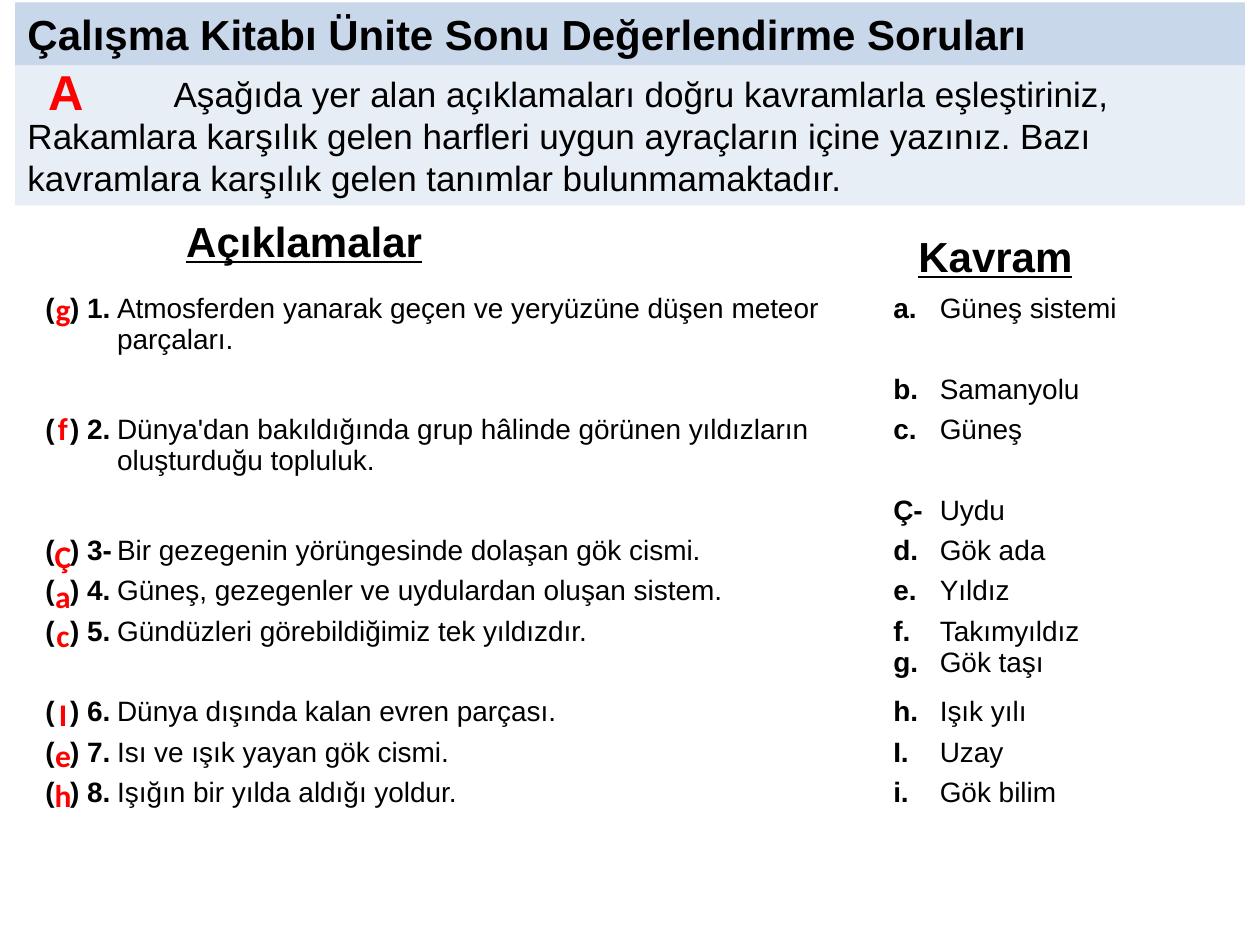
from dataclasses import dataclass
from lxml.etree import SubElement
from pptx import Presentation
from pptx.dml.color import RGBColor as RGB
from pptx.enum.shapes import MSO_SHAPE as Shape
from pptx.enum.text import MSO_ANCHOR as Anchor, MSO_AUTO_SIZE as AutoSize, PP_ALIGN as Align
from pptx.oxml.ns import qn
from pptx.util import Inches, Pt

TITLE = "Çalışma Kitabı Ünite Sonu Değerlendirme Soruları"
TASK = ("Aşağıda yer alan açıklamaları doğru kavramlarla eşleştiriniz, "
        "Rakamlara karşılık gelen harfleri uygun ayraçların içine yazınız. "
        "Bazı kavramlara karşılık gelen tanımlar bulunmamaktadır.")
ROWS = [
    ("(  ) 1.", "Atmosferden yanarak geçen ve yeryüzüne düşen meteor parçaları.", "a.", "Güneş sistemi"),
    ("", "", "b.", "Samanyolu"),
    ("(  ) 2.", "Dünya'dan bakıldığında grup hâlinde görünen yıldızların oluşturduğu topluluk.", "c.", "Güneş"),
    ("", "", "Ç-", "Uydu"),
    ("(  ) 3-", "Bir gezegenin yörüngesinde dolaşan gök cismi.", "d.", "Gök ada"),
    ("(  ) 4.", "Güneş, gezegenler ve uydulardan oluşan sistem.", "e.", "Yıldız"),
    ("(  ) 5.", "Gündüzleri görebildiğimiz tek yıldızdır.", "f.\ng.", "Takımyıldız\vGök taşı"),
    ("(  ) 6.", "Dünya dışında kalan evren parçası.", "h.", "Işık yılı"),
    ("(  ) 7.", "Isı ve ışık yayan gök cismi.", "I.", "Uzay"),
    ("(  ) 8.", "Işığın bir yılda aldığı yoldur.", "i.", "Gök bilim"),
]
ANSWERS = {0: ("g", 0.08), 2: ("f", 0.09), 4: ("Ç", 0.04), 5: ("a", 0.04),
           6: ("c", 0.05), 7: ("I", 0.06), 8: ("e", 0.06), 9: ("h", 0.06)}
TALL_ROWS = {0, 2, 6}
COLS = (0.57, 6.16, 0.37, 2.12)
ROW_H = 0.32
TABLE_X, TABLE_Y = 0.35, 2.33
ANSWER_X, ANSWER_W, ANSWER_H = 0.33, 0.34, 0.4


@dataclass(frozen=True)
class Theme:
    font: str = "Arial"
    answer_font: str = "Calibri"
    ink: RGB = RGB(0, 0, 0)
    red: RGB = RGB(255, 0, 0)
    paper: RGB = RGB(255, 255, 255)
    band: RGB = RGB(0x4F, 0x81, 0xBD)
    heading: int = 24
    task: int = 20
    section: int = 28
    body: int = 16
    answer: int = 18


T = Theme()


def write(tf, text, size, bold=False, color=T.ink, font=T.font, underline=None, indent=0):
    tf.text = text
    for p in tf.paragraphs:
        f = p.font
        f.name, f.size, f.bold, f.underline = font, Pt(size), bold, underline
        f.color.rgb = color
        p.alignment = Align.LEFT
        if indent:
            p._p.get_or_add_pPr().set("indent", str(Inches(indent)))


def add_band(s, y, h, alpha, text, size, **style):
    sp = s.shapes.add_shape(Shape.RECTANGLE, *map(Inches, (0.12, y, 9.76, h)))
    sp.shadow.inherit = False
    sp.line.fill.background()
    sp.fill.solid()
    sp.fill.fore_color.rgb = T.band
    clr = sp.fill._xPr.find(".//" + qn("a:srgbClr"))
    SubElement(clr, qn("a:alpha")).set("val", str(alpha * 1000))
    write(sp.text_frame, text, size, **style)


def add_label(s, box, text, size, wrap=True, **style):
    tf = s.shapes.add_textbox(*map(Inches, box)).text_frame
    tf.word_wrap = wrap
    tf.auto_size = AutoSize.SHAPE_TO_FIT_TEXT
    write(tf, text, size, bold=True, **style)
    return tf


def add_matching_table(s, heights):
    box = (TABLE_X, TABLE_Y, sum(COLS), sum(heights))
    table = s.shapes.add_table(len(ROWS), len(COLS), *map(Inches, box)).table
    table.first_row = table.horz_banding = False
    for col, w in zip(table.columns, COLS):
        col.width = Inches(w)
    for row, h, texts in zip(table.rows, heights, ROWS):
        row.height = Inches(h)
        for i, (cell, text) in enumerate(zip(row.cells, texts)):
            cell.fill.solid()
            cell.fill.fore_color.rgb = T.paper
            cell.margin_left = cell.margin_right = Inches(0.01)
            cell.margin_top = cell.margin_bottom = 0
            cell.vertical_anchor = Anchor.TOP
            write(cell.text_frame, text, T.body, bold=i % 2 == 0)


def main():
    prs = Presentation()
    prs.slide_width, prs.slide_height = Inches(10), Inches(7.5)
    s = prs.slides.add_slide(prs.slide_layouts[6])

    add_band(s, 0.02, 0.5, 31, TITLE, T.heading, bold=True)
    add_band(s, 0.52, 1.11, 13, TASK, T.task, indent=1.16)
    add_label(s, (0.18, 0.44, 0.72, 0.57), "A", T.section, color=T.red, indent=0.11)
    add_label(s, (1.38, 1.66, 2.76, 0.5), "Açıklamalar", T.heading, underline=True)
    add_label(s, (7.19, 1.78, 1.67, 0.5), "Kavram", T.heading, underline=True)

    heights = [ROW_H * (2 if i in TALL_ROWS else 1) for i in range(len(ROWS))]
    add_matching_table(s, heights)
    for i, (letter, rise) in ANSWERS.items():
        y = TABLE_Y + sum(heights[:i]) - rise
        tf = add_label(s, (ANSWER_X, y, ANSWER_W, ANSWER_H), letter, T.answer,
                       wrap=False, color=T.red, font=T.answer_font)
        tf.paragraphs[0].alignment = Align.CENTER

    prs.save("out.pptx")


if __name__ == "__main__":
    main()
